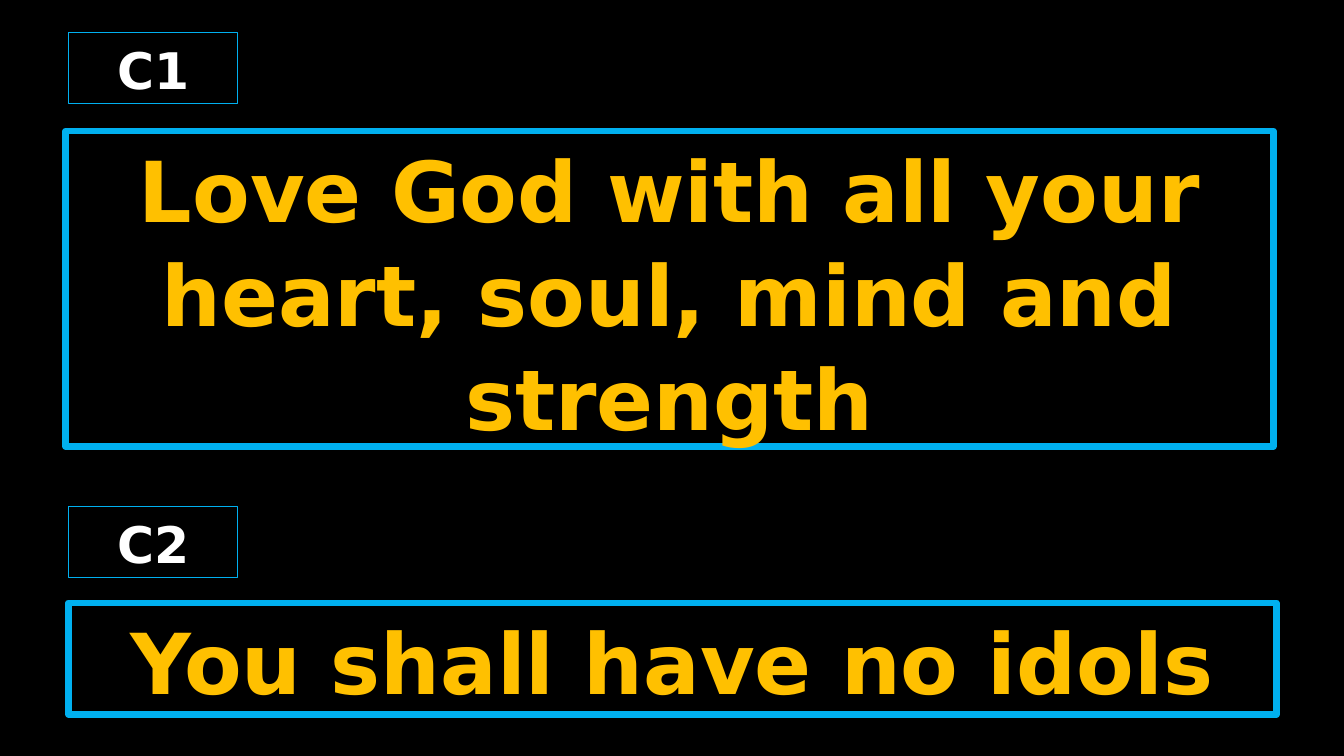
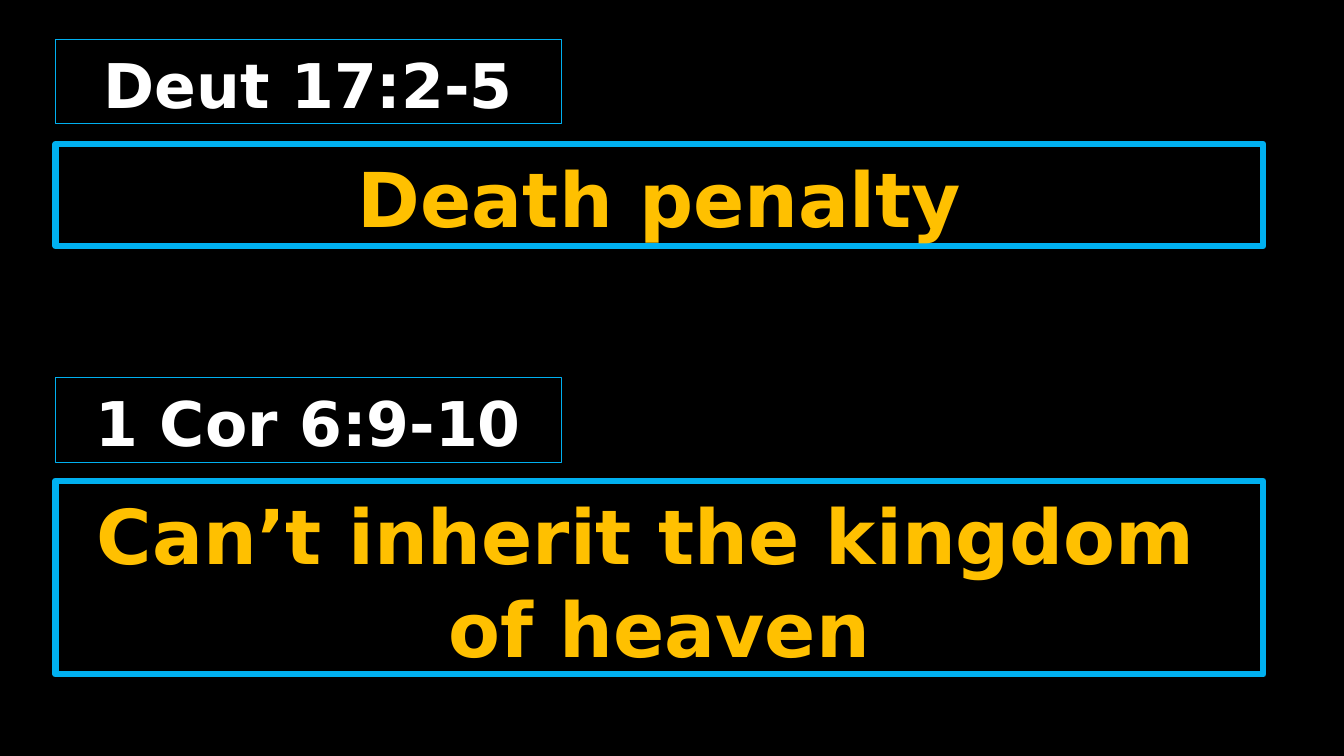
from pptx import Presentation
from pptx.dml.color import RGBColor as RGB
from pptx.enum.text import MSO_ANCHOR as Anchor, PP_ALIGN as Align
from pptx.util import Inches, Pt

COLOURS = {"back": "000000", "edge": "00B0F0", "gold": "FFC000", "white": "FFFFFF"}
FONT = "DejaVu Sans"
BLANK = 6
WIDE = 11.98


def paint(fill, name):
    fill.solid()
    fill.fore_color.rgb = RGB.from_string(COLOURS[name])


def write(frame, text, size, colour, spacing=1.03):
    """Fill a frame with centred bold text, one paragraph a line."""
    frame.word_wrap = True
    frame.vertical_anchor = Anchor.TOP
    for i, line in enumerate(text.split("\n")):
        para = frame.add_paragraph() if i else frame.paragraphs[0]
        para.alignment = Align.CENTER
        para.line_spacing = spacing
        run = para.add_run()
        run.text = line
        font = run.font
        font.name, font.size, font.bold = FONT, Pt(size), True
        font.color.rgb = RGB.from_string(COLOURS[colour])


class Deck:
    def __init__(self):
        self.prs = Presentation()
        self.prs.slide_width = Inches(13.33)
        self.prs.slide_height = Inches(7.5)
        paint(self.prs.slide_master.background.fill, "back")
        self.slide = None

    def page(self):
        self.slide = self.prs.slides.add_slide(self.prs.slide_layouts[BLANK])

    def frame(self, place, weight):
        """Add an outlined text box at left, top, width, height."""
        box = self.slide.shapes.add_textbox(*map(Inches, place))
        box.line.color.rgb = RGB.from_string(COLOURS["edge"])
        box.line.width = Pt(weight)
        return box

    def verse(self, text, left, top, high, size):
        box = self.frame((left, top, WIDE, high), 4.5)
        write(box.text_frame, text, size, "gold")

    def label(self, text, left, top, wide, high, size):
        box = self.frame((left, top, wide, high), 0.75)
        paint(box.fill, "back")
        write(box.text_frame, text, size, "white")

    def save(self):
        self.prs.save("out.pptx")


def main():
    deck = Deck()

    deck.page()
    deck.verse("Love God with all your heart, soul, mind and strength",
               0.65, 1.3, 3.13, 60)
    deck.verse("You shall have no idols", 0.68, 5.98, 1.11, 60)
    for text, top in (("C1", 0.32), ("C2", 5.02)):
        deck.label(text, 0.68, top, 1.68, 0.71, 36)

    deck.page()
    deck.verse("Death penalty", 0.55, 1.43, 1.01, 54)
    deck.verse("Can’t inherit the kingdom \nof heaven", 0.55, 4.77, 1.92, 54)
    for text, top in (("Deut 17:2-5", 0.39), ("1 Cor 6:9-10", 3.75)):
        deck.label(text, 0.55, top, 5.02, 0.84, 44)

    deck.save()


if __name__ == "__main__":
    main()
